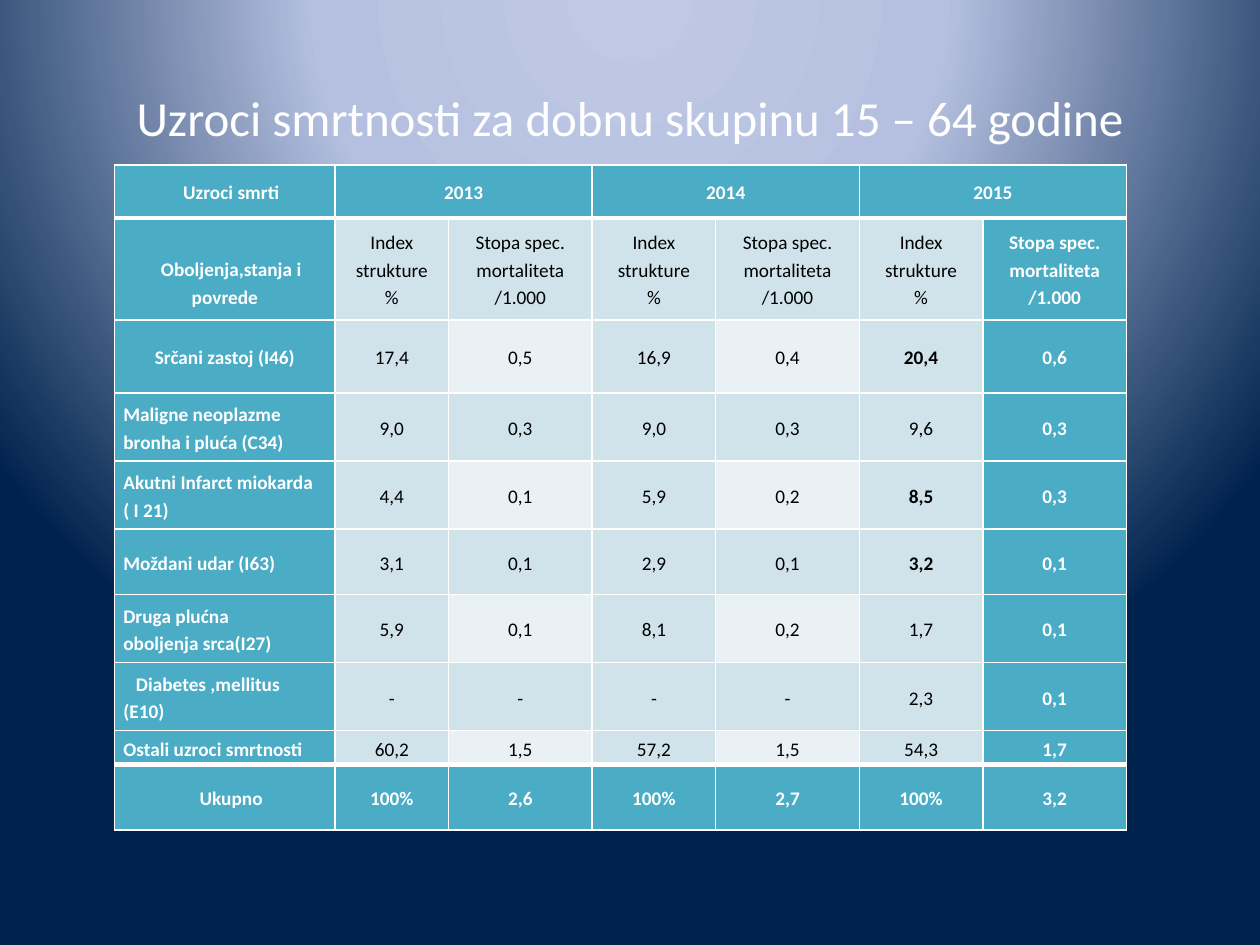
from pptx import Presentation
from pptx.dml.color import RGBColor as Rgb
from pptx.enum.text import MSO_ANCHOR as Anchor, PP_ALIGN as Align
from pptx.oxml import parse_xml
from pptx.oxml.ns import nsdecls
from pptx.util import Pt

COLORS = {"white": "FFFFFF", "black": "000000", "teal": "4BACC6",
          "band": "D0E3EA", "pale": "E9F1F5"}
GRADIENT = {0: "BFC9E5", 40: "B5C0E0", 100: "00234D"}
TITLE = "Uzroci smrtnosti za dobnu skupinu 15 – 64 godine"
INDEX, RATE = "Index strukture\n%", "Stopa spec. mortaliteta /1.000"
ROWS = [
    ["Uzroci smrti", "2013", "", "2014", "", "2015", ""],
    ["Oboljenja,stanja i povrede"] + [INDEX, RATE] * 3,
    ["Srčani zastoj (I46)", "17,4", "0,5", "16,9", "0,4", "20,4", "0,6"],
    ["Maligne neoplazme bronha i pluća (C34)", "9,0", "0,3", "9,0", "0,3", "9,6", "0,3"],
    ["Akutni Infarct miokarda\n( I 21)", "4,4", "0,1", "5,9", "0,2", "8,5", "0,3"],
    ["Moždani udar (I63)", "3,1", "0,1", "2,9", "0,1", "3,2", "0,1"],
    ["Druga plućna\noboljenja srca(I27)", "5,9", "0,1", "8,1", "0,2", "1,7", "0,1"],
    ["Diabetes ,mellitus\n(E10)", "-", "-", "-", "-", "2,3", "0,1"],
    ["Ostali uzroci smrtnosti", "60,2", "1,5", "57,2", "1,5", "54,3", "1,7"],
    ["Ukupno", "100%", "2,6", "100%", "2,7", "100%", "3,2"],
]
WIDTHS = [126, 64.8, 82.1, 70.6, 82.1, 70.6, 82.1]
HEIGHTS = [30.2, 58.3, 41.8, 38.9, 38.9, 37.4, 38.9, 38.9, 19.4, 37.4]
LAST_ROW, LAST_COLUMN = len(ROWS) - 1, len(WIDTHS) - 1
CENTERED_LABELS = {0, 1, 2, LAST_ROW}
INDENTED_LABELS = {0, 1, 7, LAST_ROW}
BOLD_VALUES = {(2, 5), (4, 5), (5, 5)}


def apply_format(target, values):
    """Set every attribute named in a dict of format values."""
    for name, value in values.items():
        setattr(target, name, value)


def style_text(paragraph, size, color, bold=False):
    """Format the runs of a paragraph."""
    for span in paragraph.runs:
        apply_format(span.font, {"name": "Calibri", "size": Pt(size), "bold": bold})
        span.font.color.rgb = Rgb.from_string(COLORS[color])


def paint_background(page):
    """Give the page its circular gradient."""
    stops = "".join(f'<a:gs pos="{place * 1000}"><a:srgbClr val="{color}"/></a:gs>'
                    for place, color in GRADIENT.items())
    page.element.cSld.insert(0, parse_xml(
        f'<p:bg {nsdecls("p", "a")}><p:bgPr><a:gradFill rotWithShape="1">'
        f'<a:gsLst>{stops}</a:gsLst><a:path path="circle">'
        '<a:fillToRect l="50000" t="-80000" r="50000" b="180000"/></a:path>'
        '</a:gradFill><a:effectLst/></p:bgPr></p:bg>'))


def add_title(page):
    """Place the title."""
    title = page.shapes.title
    apply_format(title, {"left": Pt(36), "top": Pt(21.6), "width": Pt(648), "height": Pt(90)})
    frame = title.text_frame
    apply_format(frame, {"text": TITLE, "vertical_anchor": Anchor.MIDDLE})
    frame.paragraphs[0].alignment = Align.CENTER
    style_text(frame.paragraphs[0], 28, "white")


def draw_borders(cell, row):
    """Draw white borders, thick below the header and above the total."""
    weights = {"L": 1, "R": 1, "T": 3 if row in (1, LAST_ROW) else 1,
               "B": 3 if row in (0, LAST_ROW - 1) else 1}
    properties = cell._tc.get_or_add_tcPr()
    for side, weight in weights.items():
        properties.append(parse_xml(
            f'<a:ln{side} {nsdecls("a")} w="{Pt(weight)}"><a:solidFill>'
            f'<a:srgbClr val="{COLORS["white"]}"/></a:solidFill></a:ln{side}>'))


def pick_fill(row, column):
    """Choose the fill name of a cell."""
    if row in (0, LAST_ROW) or column in (0, LAST_COLUMN):
        return "teal"
    return "pale" if row % 2 == 0 and column % 2 == 0 else "band"


def fill_cell(cell, row, column, text):
    """Write and format one table cell."""
    fill = pick_fill(row, column)
    strong = fill == "teal"
    lead = Pt(15) if (row, column) == (1, 0) else 0
    draw_borders(cell, row)
    cell.fill.solid()
    cell.fill.fore_color.rgb = Rgb.from_string(COLORS[fill])
    apply_format(cell, {"text": text, "vertical_anchor": Anchor.MIDDLE,
                        "margin_left": Pt(5), "margin_right": Pt(5),
                        "margin_top": lead, "margin_bottom": 0})
    centered = column > 0 or row in CENTERED_LABELS
    for para in cell.text_frame.paragraphs:
        apply_format(para, {"alignment": Align.CENTER if centered else Align.LEFT,
                            "line_spacing": 1.15})
        style_text(para, 11, "white" if strong else "black",
                   strong or (row, column) in BOLD_VALUES)
    if column == 0 and row in INDENTED_LABELS:
        first = cell.text_frame.paragraphs[0]
        first._p.get_or_add_pPr().set("indent", str(Pt(7.2)))


def add_mortality_table(page):
    """Build the table of causes of death."""
    table = page.shapes.add_table(len(ROWS), len(WIDTHS), Pt(65.5), Pt(94.3),
                                  Pt(sum(WIDTHS)), Pt(sum(HEIGHTS))).table
    for column, width in zip(table.columns, WIDTHS):
        column.width = Pt(width)
    for line, height in zip(table.rows, HEIGHTS):
        line.height = Pt(height)
    for row, texts in enumerate(ROWS):
        for column, text in enumerate(texts):
            fill_cell(table.cell(row, column), row, column, text)
    for column in (1, 3, 5):
        table.cell(0, column).merge(table.cell(0, column + 1))


def main():
    """Build and save the deck."""
    deck = Presentation()
    apply_format(deck, {"slide_width": Pt(720), "slide_height": Pt(540)})
    page = deck.slides.add_slide(deck.slide_layouts[5])
    paint_background(page)
    add_title(page)
    add_mortality_table(page)
    deck.save("out.pptx")


if __name__ == "__main__":
    main()
